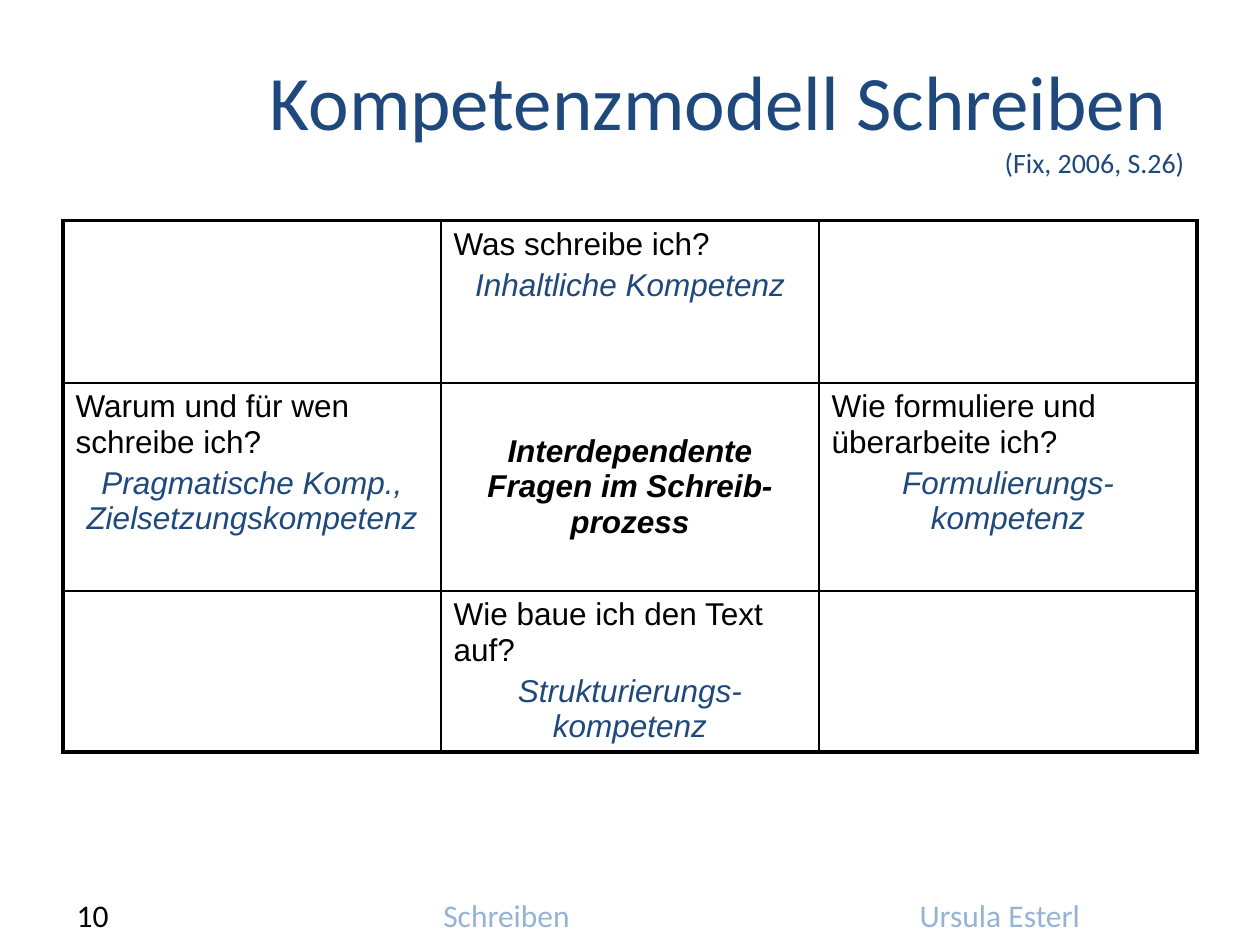
from lxml.etree import SubElement
from pptx import Presentation
from pptx.dml.color import RGBColor
from pptx.enum.text import MSO_ANCHOR, PP_ALIGN
from pptx.oxml.ns import qn
from pptx.util import Inches, Pt

BLACK = RGBColor(0x00, 0x00, 0x00)
NAVY = RGBColor(0x1F, 0x49, 0x7D)
LIGHT_BLUE = RGBColor(0x95, 0xB3, 0xD7)

WIDTH, HEIGHT = Inches(10), Inches(7.5)
MARGIN = 0.05
ROW_HEIGHTS = (1.29, 1.65, 1.28)
OUTER, INNER = 2.25, 1

QUESTIONS = {
    (0, 1): ("Was schreibe ich?", "Inhaltliche Kompetenz"),
    (1, 0): ("Warum und für wen schreibe ich?",
             "Pragmatische Komp., Zielsetzungskompetenz"),
    (1, 2): ("Wie formuliere und überarbeite ich?", "Formulierungs-kompetenz"),
    (2, 1): ("Wie baue ich den Text auf?", "Strukturierungs-kompetenz"),
}
CENTRE = "Interdependente Fragen im Schreib-prozess"
FOOTERS = (
    ("10", 0.051, 0.233, BLACK),
    ("Schreiben", 0.342, 0.317, LIGHT_BLUE),
    ("Ursula Esterl", 0.72, 0.233, LIGHT_BLUE),
)


def add_text(p, text, size=18, font="Arial", color=BLACK, bold=False,
             italic=False, align=PP_ALIGN.LEFT, before=0):
    p.alignment = align
    p.space_before = Pt(before)
    r = p.add_run()
    r.text = text
    r.font.size = Pt(size)
    r.font.name = font
    r.font.color.rgb = color
    r.font.bold = bold
    r.font.italic = italic


def set_borders(cell, widths):
    props = cell._tc.get_or_add_tcPr()
    for side, width in widths.items():
        line = SubElement(props, qn(f"a:{side}"), w=str(Pt(width)))
        fill = SubElement(line, qn("a:solidFill"))
        SubElement(fill, qn("a:srgbClr"), val=str(BLACK))


def build_title(s, left, top, width, height):
    title = s.shapes.title
    title.left, title.top, title.width, title.height = left, top, width, height
    tf = title.text_frame
    tf.vertical_anchor = MSO_ANCHOR.MIDDLE
    p = tf.paragraphs[0]
    look = dict(font="Calibri", color=NAVY, align=PP_ALIGN.RIGHT)
    add_text(p, "Kompetenzmodell Schreiben ", size=44, **look)
    p.add_line_break()
    add_text(p, "(Fix, 2006, S.26)", size=16, **look)


def build_matrix(s, left, top, width, height):
    n = len(ROW_HEIGHTS)
    table = s.shapes.add_table(n, n, left, top, width, height).table
    table.first_row = table.horz_banding = False
    for column in table.columns:
        column.width = width // n
    for row, share in zip(table.rows, ROW_HEIGHTS):
        row.height = int(height * share / sum(ROW_HEIGHTS))
    for i in range(n):
        for j in range(n):
            cell = table.cell(i, j)
            set_borders(cell, {
                "lnL": OUTER if j == 0 else INNER,
                "lnR": OUTER if j == n - 1 else INNER,
                "lnT": OUTER if i == 0 else INNER,
                "lnB": OUTER if i == n - 1 else INNER,
            })
            cell.fill.background()
            if (i, j) in QUESTIONS:
                question, skill = QUESTIONS[i, j]
                tf = cell.text_frame
                add_text(tf.paragraphs[0], question)
                add_text(tf.add_paragraph(), skill, color=NAVY, italic=True,
                         align=PP_ALIGN.CENTER, before=3.6)
    centre = table.cell(1, 1)
    centre.vertical_anchor = MSO_ANCHOR.MIDDLE
    add_text(centre.text_frame.paragraphs[0], CENTRE, bold=True, italic=True,
             align=PP_ALIGN.CENTER)


def build_footer(s, left, top, width, height):
    for text, x, share, color in FOOTERS:
        box = s.shapes.add_textbox(left + int(width * x), top,
                                   int(width * share), height)
        tf = box.text_frame
        tf.word_wrap = True
        add_text(tf.paragraphs[0], text, font="Calibri", color=color)


def main():
    prs = Presentation()
    prs.slide_width, prs.slide_height = WIDTH, HEIGHT
    s = prs.slides.add_slide(prs.slide_layouts[5])
    left, width = int(WIDTH * MARGIN), int(WIDTH * (1 - 2 * MARGIN))
    build_title(s, left, int(HEIGHT * 0.04), width, int(HEIGHT / 6))
    build_matrix(s, left, Inches(1.75), width, Inches(sum(ROW_HEIGHTS)))
    build_footer(s, 0, Inches(7.06), WIDTH, Inches(0.29))
    prs.save("out.pptx")


if __name__ == "__main__":
    main()
